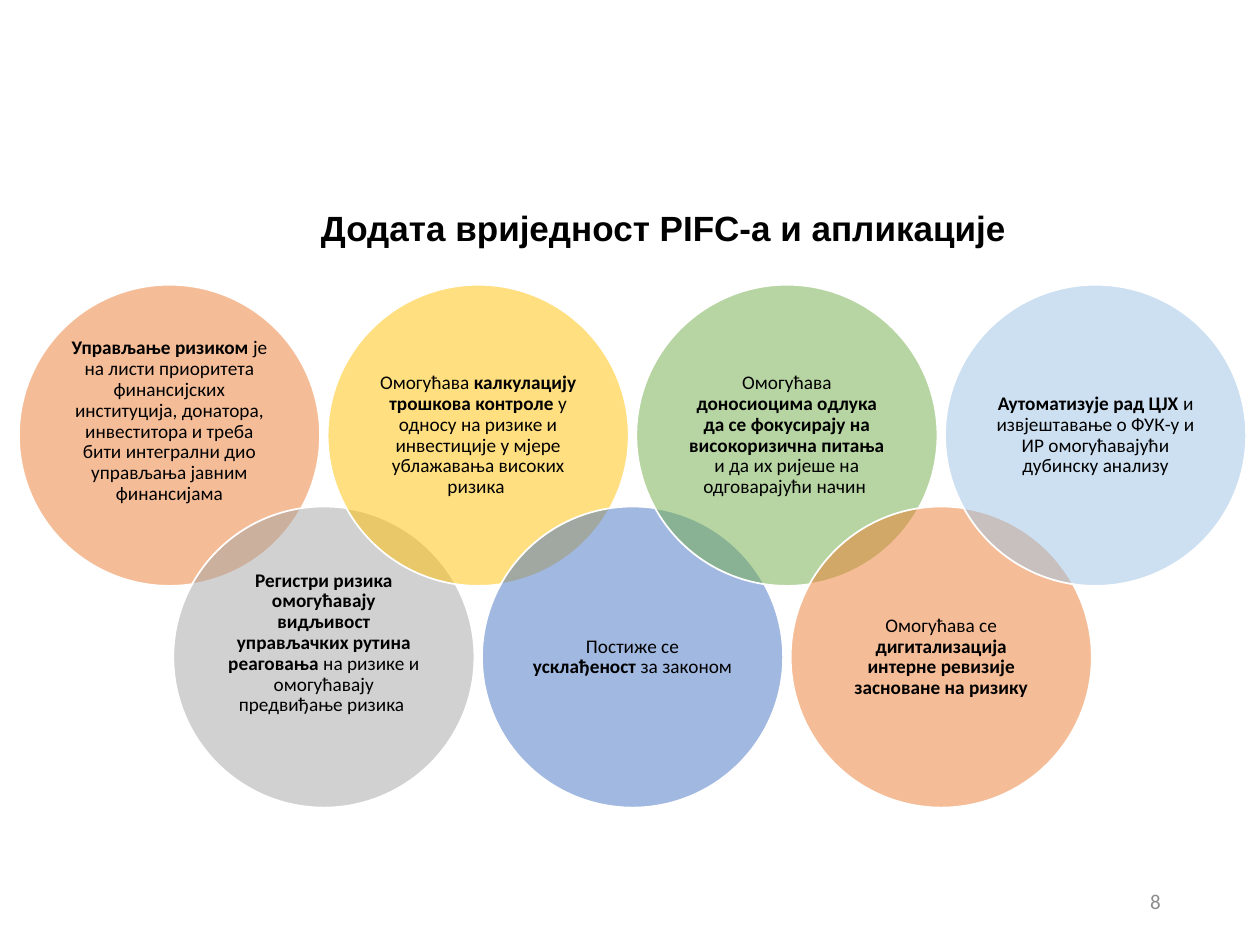
from lxml import etree
from pptx import Presentation
from pptx import util as u
from pptx.dml.color import RGBColor
from pptx.enum import shapes, text
from pptx.oxml.ns import qn

SIZE = 2.39          # circle diameter
INSET = 0.35         # circle edge to its text
LEFT, STEP = 0.15, 1.225
ROWS = 2.26, 4.02    # tops of the upper and lower circles
LIFT = 0.22          # extra bottom margin that raises a text

# fill, runs (text between asterisks is bold), bottom lift
RINGS = [
    ("ED7D31", "*Управљање ризиком *је на листи приоритета финансијских "
     "институција, донатора, инвеститора и треба бити интегрални дио "
     "управљања јавним финансијама", LIFT),
    ("A5A5A5", "*Регистри ризика омогућавају видљивост управљачких рутина "
     "реаговања *на ризике и омогућавају предвиђање ризика ", LIFT),
    ("FFC000", "Омогућава *калкулацију трошкова контроле *у односу на ризике "
     "и инвестиције у мјере ублажавања високих ризика ", 0),
    ("4472C4", "Постиже се *усклађеност* за законoм", 0),
    ("70AD47", "Омогућава *доносиоцима одлука да се фокусирају на "
     "високоризична питања *и да их ријеше на одговарајући начин ", 0),
    ("ED7D31", "Омогућава се *дигитализација интерне ревизије засноване на "
     "ризику*", 0),
    ("9DC3E6", "*Аутоматизује рад ЦЈХ *и извјештавање о ФУК-у и ИР "
     "омогућавајући дубинску анализу", 0),
]


def tint(color, code):
    color.rgb = RGBColor.from_string(code)


def write(slide, words, box, size=11, face="Calibri", code="000000",
          align="CENTER", space=0.9, pad=(0.1, 0.05), lift=0):
    """Add a text box; words between asterisks are bold."""
    frame = slide.shapes.add_textbox(*map(u.Inches, box)).text_frame
    frame.word_wrap = True
    frame.vertical_anchor = text.MSO_ANCHOR.MIDDLE
    frame.margin_left = frame.margin_right = u.Inches(pad[0])
    frame.margin_top = u.Inches(pad[1])
    frame.margin_bottom = u.Inches(pad[1] + lift)
    para = frame.paragraphs[0]
    para.alignment = getattr(text.PP_ALIGN, align)
    para.line_spacing = space
    for i, part in enumerate(words.split("*")):
        if part:
            run = para.add_run()
            run.text = part
            run.font.name, run.font.size = face, u.Pt(size)
            run.font.bold = i % 2 == 1
            tint(run.font.color, code)


def ring(slide, left, top, code):
    """Add a half transparent circle with a white edge."""
    oval = slide.shapes.add_shape(
        shapes.MSO_SHAPE.OVAL, *map(u.Inches, (left, top, SIZE, SIZE)))
    oval.shadow.inherit = False
    oval.fill.solid()
    tint(oval.fill.fore_color, code)
    tone = oval.fill._xPr.find(".//" + qn("a:srgbClr"))
    etree.SubElement(tone, qn("a:alpha"), val="50000")
    tint(oval.line.color, "FFFFFF")
    oval.line.width = u.Pt(1)


def main():
    deck = Presentation()
    deck.slide_width, deck.slide_height = u.Inches(10), u.Inches(7.5)
    slide = deck.slides.add_slide(deck.slide_layouts[6])
    write(slide, "*Додата вриједност PIFC-а и апликације *",
          (1.04, 1.64, 8.53, 0.37), size=20, face="Arial")
    side = SIZE - 2 * INSET
    for i, (code, words, lift) in enumerate(RINGS):
        left, top = LEFT + i * STEP, ROWS[i % 2]
        ring(slide, left, top, code)
        write(slide, words, (left + INSET, top + INSET, side, side),
              pad=(0.05, 0.05), lift=lift)
    write(slide, "8", (7.06, 6.95, 2.25, 0.4), size=12, code="8C8C8C",
          align="RIGHT", space=1)
    deck.save("out.pptx")


if __name__ == "__main__":
    main()
